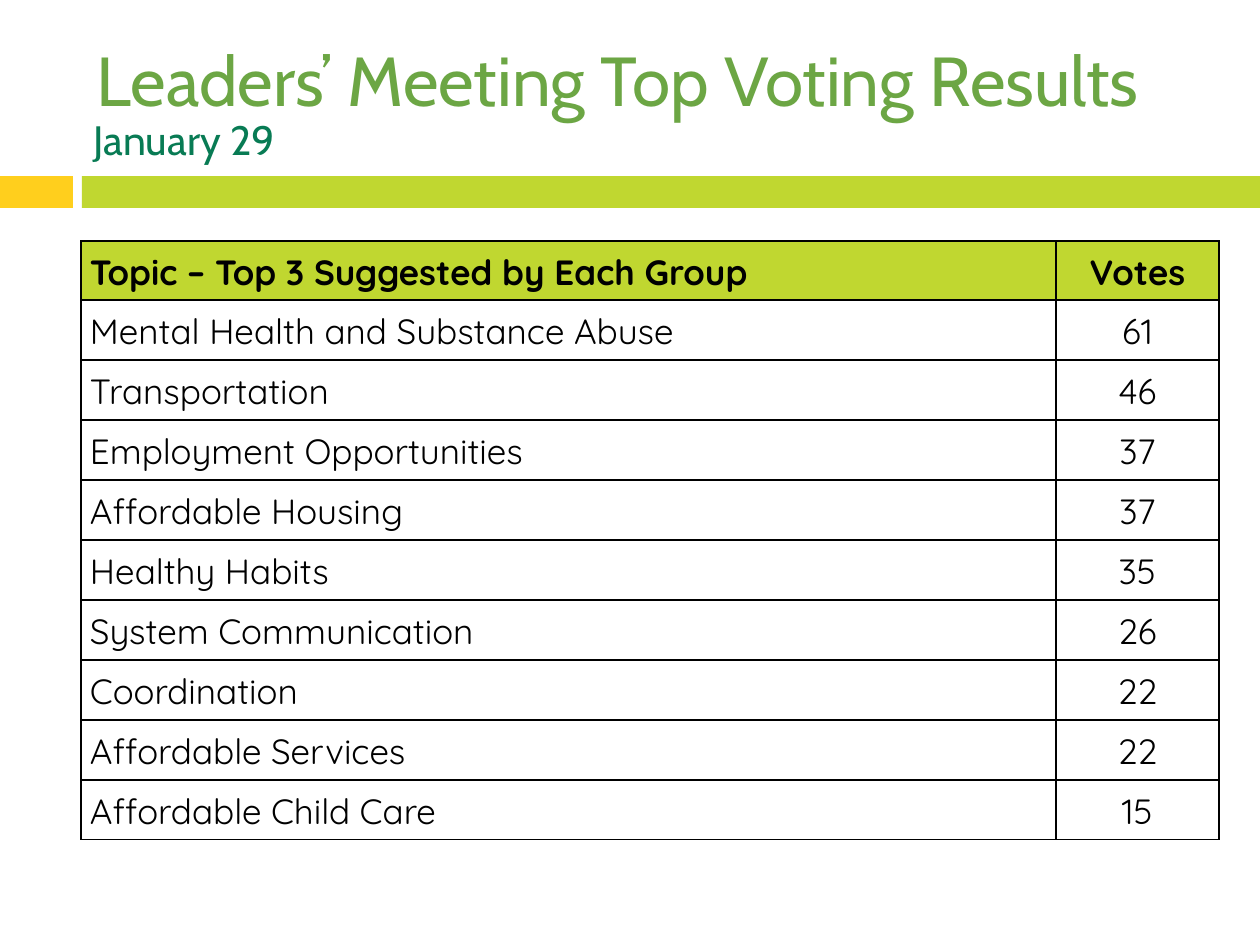
from dataclasses import dataclass

from lxml import etree
from pptx import Presentation
from pptx.dml.color import RGBColor
from pptx.enum.shapes import MSO_SHAPE
from pptx.enum.text import MSO_ANCHOR, MSO_AUTO_SIZE, PP_ALIGN
from pptx.oxml.ns import qn
from pptx.util import Emu, Pt

RECTANGLE = MSO_SHAPE.RECTANGLE
MIDDLE = MSO_ANCHOR.MIDDLE
LEFT, CENTER = PP_ALIGN.LEFT, PP_ALIGN.CENTER
NO_AUTOFIT = MSO_AUTO_SIZE.NONE

EMU_PER_PX = 914400 / 126
TITLE_ONLY = 5
BORDER_SIDES = ("a:lnL", "a:lnR", "a:lnT", "a:lnB")
COLORS = {
    "yellow": "FFCF1D",
    "lime": "C0D730",
    "title": "6CA644",
    "date": "087B54",
    "ink": "000000",
}


@dataclass(frozen=True)
class Box:
    left: int
    top: int
    width: int
    height: int

    def emu(self) -> tuple[Emu, Emu, Emu, Emu]:
        return px(self.left), px(self.top), px(self.width), px(self.height)


@dataclass(frozen=True)
class Bar:
    box: Box
    color: str


@dataclass(frozen=True)
class TextStyle:
    font: str
    size: float
    color: str
    bold: bool = False
    align: PP_ALIGN = LEFT


@dataclass(frozen=True)
class Result:
    topic: str
    votes: str


BARS = (
    Bar(Box(0, 176, 73, 32), "yellow"),
    Bar(Box(82, 176, 1178, 32), "lime"),
)
TITLE_BOX = Box(84, 32, 1124, 94)
DATE_BOX = Box(81, 105, 1124, 68)
TABLE_BOX = Box(81, 241, 1138, 599)
COLUMN_WIDTHS = (975, 163)
HEADER_HEIGHT, ROW_HEIGHT = 59, 60
CELL_INSET = 9
RESULTS = (
    Result("Topic – Top 3 Suggested by Each Group", "Votes"),
    Result("Mental Health and Substance Abuse", "61"),
    Result("Transportation", "46"),
    Result("Employment Opportunities", "37"),
    Result("Affordable Housing", "37"),
    Result("Healthy Habits", "35"),
    Result("System Communication", "26"),
    Result("Coordination", "22"),
    Result("Affordable Services", "22"),
    Result("Affordable Child Care", "15"),
)


def px(length: int) -> Emu:
    return Emu(round(length * EMU_PER_PX))


def rgb(name: str) -> RGBColor:
    return RGBColor.from_string(COLORS[name])


def draw_bar(slide, bar: Bar) -> None:
    stripe = slide.shapes.add_shape(RECTANGLE, *bar.box.emu())
    stripe.shadow.inherit = False
    stripe.fill.solid()
    stripe.fill.fore_color.rgb = rgb(bar.color)
    stripe.line.fill.background()


def write(paragraph, text: str, style: TextStyle) -> None:
    paragraph.alignment = style.align
    run = paragraph.add_run()
    run.text = text
    run.font.name = style.font
    run.font.size = Pt(style.size)
    run.font.bold = style.bold
    run.font.color.rgb = rgb(style.color)


def fill_heading(heading, box: Box, text: str, style: TextStyle) -> None:
    heading.left, heading.top, heading.width, heading.height = box.emu()
    frame = heading.text_frame
    frame.word_wrap = True
    frame.auto_size = NO_AUTOFIT
    frame.vertical_anchor = MIDDLE
    write(frame.paragraphs[0], text, style)


def outline_cell(cell) -> None:
    properties = cell._tc.get_or_add_tcPr()
    for side in BORDER_SIDES:
        border = etree.SubElement(properties, qn(side), w=str(Pt(1)))
        fill = etree.SubElement(border, qn("a:solidFill"))
        etree.SubElement(fill, qn("a:srgbClr"), val=COLORS["ink"])


def fill_cell(cell, text: str, is_header: bool, align: PP_ALIGN) -> None:
    outline_cell(cell)
    if is_header:
        cell.fill.solid()
        cell.fill.fore_color.rgb = rgb("lime")
    else:
        cell.fill.background()
    cell.vertical_anchor = MIDDLE
    cell.margin_left = cell.margin_right = px(CELL_INSET)
    cell.margin_top = cell.margin_bottom = 0
    paragraph = cell.text_frame.paragraphs[0]
    paragraph.line_spacing = 1.07
    write(paragraph, text, TextStyle("Quicksand", 20, "ink", is_header, align))


def draw_results(slide, results: tuple[Result, ...]) -> None:
    table = slide.shapes.add_table(
        len(results), len(COLUMN_WIDTHS), *TABLE_BOX.emu()
    ).table
    table.horz_banding = False
    for column, width in zip(table.columns, COLUMN_WIDTHS):
        column.width = px(width)
    for index, (row, result) in enumerate(zip(table.rows, results)):
        is_header = index == 0
        row.height = px(HEADER_HEIGHT if is_header else ROW_HEIGHT)
        fill_cell(row.cells[0], result.topic, is_header, LEFT)
        fill_cell(row.cells[1], result.votes, is_header, CENTER)


def main() -> None:
    deck = Presentation()
    deck.slide_width, deck.slide_height = px(1260), px(945)
    slide = deck.slides.add_slide(deck.slide_layouts[TITLE_ONLY])
    for bar in BARS:
        draw_bar(slide, bar)
    fill_heading(
        slide.shapes.title,
        TITLE_BOX,
        "Leaders’ Meeting Top Voting Results",
        TextStyle("Cabin", 39.6, "title"),
    )
    fill_heading(
        slide.shapes.add_textbox(*DATE_BOX.emu()),
        DATE_BOX,
        "January 29",
        TextStyle("Cabin", 23.4, "date"),
    )
    draw_results(slide, RESULTS)
    deck.save("out.pptx")


if __name__ == "__main__":
    main()
